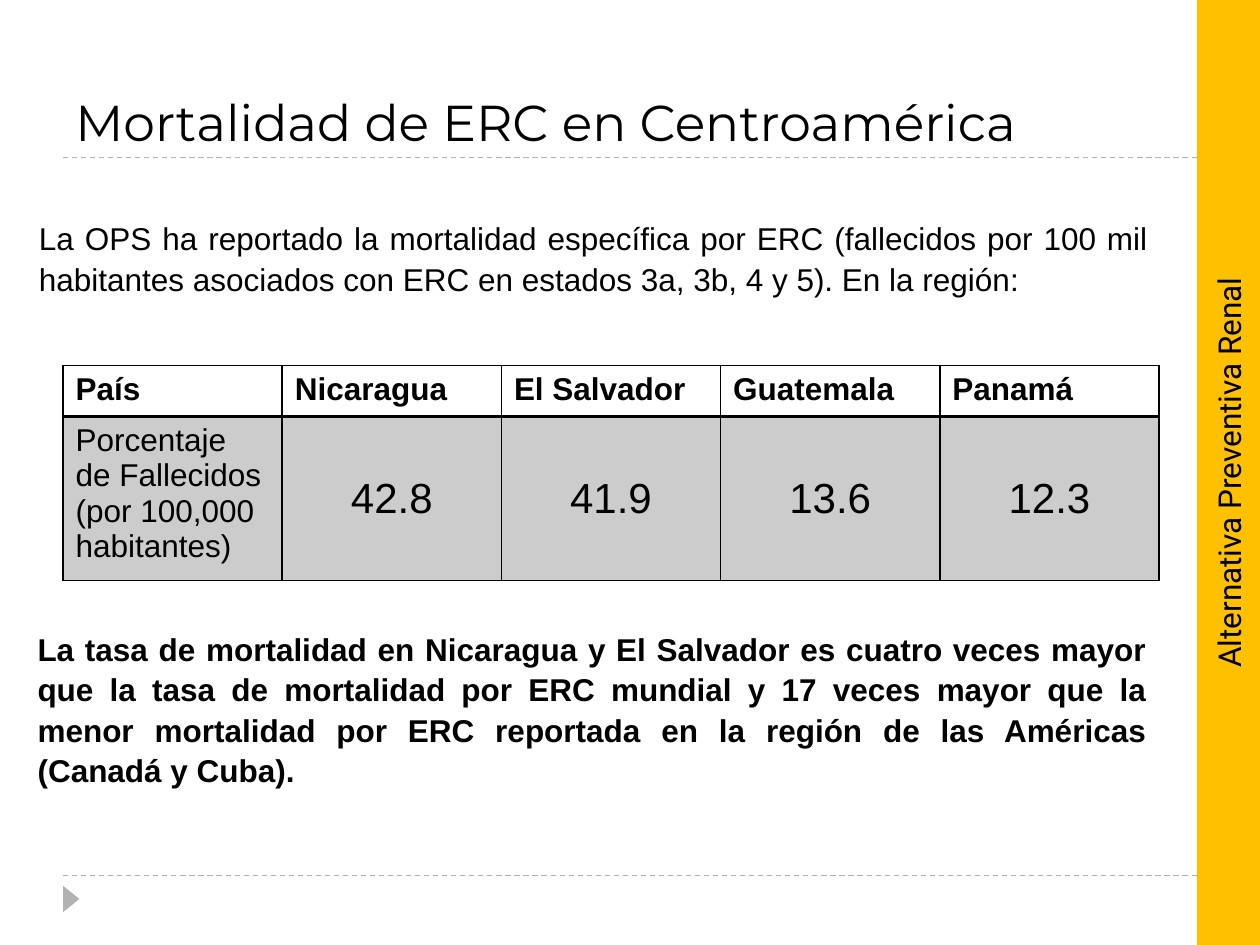
from dataclasses import dataclass

from lxml import etree
from pptx import Presentation
from pptx import util as u
from pptx.dml.color import RGBColor
from pptx.enum import dml, shapes, text
from pptx.oxml import ns


@dataclass(frozen=True)
class Theme:
    """Colours, fonts and type sizes of the slide."""
    ink: str = "000000"
    rule: str = "B2B2B2"
    accent: str = "FFC000"
    shade: str = "CCCCCC"
    heading: str = "Montserrat"
    body: str = "Arial"
    side: str = "Roboto"
    title_size: float = 28.8
    body_size: float = 18
    figure_size: float = 24


@dataclass(frozen=True)
class Box:
    """A region in columns and rows of the slide grid."""
    left: float
    top: float
    width: float
    height: float

    def turned(self):
        """Give the box whose quarter turn fills this one."""
        shift = (self.width - self.height) / 2
        return Box(self.left + shift, self.top - shift, self.height, self.width)

    def lengths(self):
        """Give left, top, width and height as slide lengths."""
        return [grid(n) for n in (self.left, self.top, self.width, self.height)]


THEME = Theme()
COLUMNS, ROWS = 20, 15
UNIT = 0.5
RATES = {
    "País": "Porcentaje de Fallecidos (por 100,000 habitantes)",
    "Nicaragua": "42.8",
    "El Salvador": "41.9",
    "Guatemala": "13.6",
    "Panamá": "12.3",
}
INTRO = ("La OPS ha reportado la mortalidad específica por ERC (fallecidos por 100 mil "
         "habitantes asociados con ERC en estados 3a, 3b, 4 y 5). En la región:")
CONCLUSION = ("La tasa de mortalidad en Nicaragua y El Salvador es cuatro veces mayor que la "
              "tasa de mortalidad por ERC mundial y 17 veces mayor que la menor mortalidad por "
              "ERC reportada en la región de las Américas (Canadá y Cuba).")


def grid(count):
    """Turn grid units into a length."""
    return u.Inches(count * UNIT)


def write(frame, words, font, size, bold=False, align=text.PP_ALIGN.LEFT, spacing=1.0):
    """Put one styled paragraph in a text frame."""
    frame.word_wrap = True
    line = frame.paragraphs[0]
    line.text = words
    line.alignment = align
    line.line_spacing = spacing
    line.font.name = font
    line.font.size = u.Pt(size)
    line.font.bold = bold
    line.font.color.rgb = RGBColor.from_string(THEME.ink)


def add_rule(slide, box):
    """Draw a dashed rule along the bottom of the box."""
    bottom = grid(box.top + box.height)
    rule = slide.shapes.add_connector(
        shapes.MSO_CONNECTOR.STRAIGHT, grid(box.left), bottom, grid(box.left + box.width), bottom)
    rule.line.color.rgb = RGBColor.from_string(THEME.rule)
    rule.line.width = u.Pt(0.75)
    rule.line.dash_style = dml.MSO_LINE.DASH
    etree.SubElement(rule._element.spPr, ns.qn("a:effectLst"))


def add_turned(slide, kind, box, color, rotation):
    """Add a plain shape, turned a quarter, that fills the box."""
    shape = slide.shapes.add_shape(kind, *box.turned().lengths())
    shape.rotation = rotation
    shape.shadow.inherit = False
    shape.fill.solid()
    shape.fill.fore_color.rgb = RGBColor.from_string(color)
    shape.line.fill.background()
    return shape


def add_heading(slide, box):
    """Place the title above its rule."""
    add_rule(slide, box)
    title = slide.shapes.add_textbox(*box.lengths()).text_frame
    title.vertical_anchor = text.MSO_ANCHOR.BOTTOM
    write(title, "Mortalidad de ERC en Centroamérica", THEME.heading, THEME.title_size)


def add_footer(slide, box):
    """Place the footer rule and the arrow marker below it."""
    add_rule(slide, Box(box.left, box.top, box.width, 0))
    marker = Box(box.left, box.top + 0.16, 0.26, 0.42)
    add_turned(slide, shapes.MSO_SHAPE.ISOSCELES_TRIANGLE, marker, THEME.rule, 90)


def add_statement(slide, box, words, bold=False):
    """Place a justified paragraph."""
    statement = slide.shapes.add_textbox(*box.lengths()).text_frame
    write(statement, words, THEME.body, THEME.body_size, bold, text.PP_ALIGN.JUSTIFY, 1.07)


def add_borders(cell, bottom):
    """Outline a cell, with its own bottom weight."""
    properties = cell._tc.get_or_add_tcPr()
    for side, weight in zip("LRTB", (1, 1, 1, bottom)):
        edge = etree.SubElement(properties, ns.qn(f"a:ln{side}"), w=str(u.Pt(weight)))
        fill = etree.SubElement(edge, ns.qn("a:solidFill"))
        etree.SubElement(fill, ns.qn("a:srgbClr"), val=THEME.ink)


def add_rates(slide, box):
    """Place the table of death rates by country."""
    rates = slide.shapes.add_table(2, len(RATES), *box.lengths()).table
    rates.rows[0].height = grid(box.height / 4)
    rates.rows[1].height = grid(box.height * 3 / 4)
    for column, (country, rate) in enumerate(RATES.items()):
        head, value = rates.cell(0, column), rates.cell(1, column)
        add_borders(head, 2)
        head.fill.background()
        write(head.text_frame, country, THEME.body, THEME.body_size, True)
        add_borders(value, 1)
        value.fill.solid()
        value.fill.fore_color.rgb = RGBColor.from_string(THEME.shade)
        if column:
            value.vertical_anchor = text.MSO_ANCHOR.MIDDLE
            write(value.text_frame, rate, THEME.body, THEME.figure_size,
                  align=text.PP_ALIGN.CENTER)
        else:
            write(value.text_frame, rate, THEME.body, THEME.body_size)


def add_sidebar(slide, box):
    """Place the coloured band with its upward label."""
    band = add_turned(slide, shapes.MSO_SHAPE.RECTANGLE, box, THEME.accent, 270)
    band.text_frame.vertical_anchor = text.MSO_ANCHOR.MIDDLE
    write(band.text_frame, "Alternativa Preventiva Renal", THEME.side, THEME.body_size,
          align=text.PP_ALIGN.CENTER)


def main():
    """Build and save the slide."""
    deck = Presentation()
    deck.slide_width, deck.slide_height = grid(COLUMNS), grid(ROWS)
    slide = deck.slides.add_slide(deck.slide_layouts[6])
    add_footer(slide, Box(1, 13.9, 18, 1.1))
    add_heading(slide, Box(1, 0.34, 18, 2.16))
    add_rates(slide, Box(1, 5.8, 17.4, 3.26))
    add_statement(slide, Box(0.42, 3.34, 18, 1.42), INTRO)
    add_statement(slide, Box(0.4, 9.86, 18, 2.62), CONCLUSION, bold=True)
    add_sidebar(slide, Box(COLUMNS - 1, 0, 1, ROWS))
    deck.save("out.pptx")


if __name__ == "__main__":
    main()
